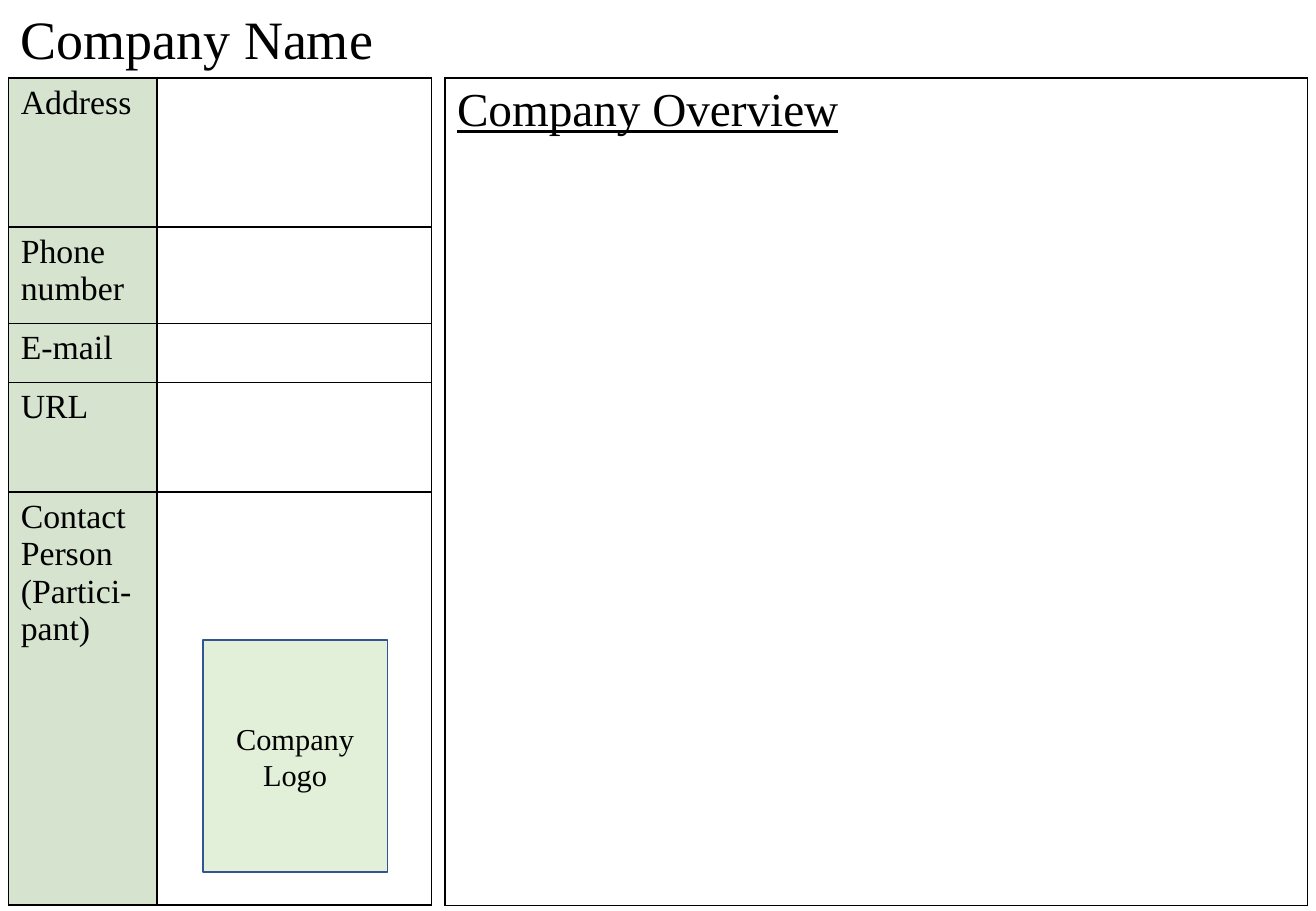
from lxml import etree
from pptx import Presentation
from pptx.dml.color import RGBColor
from pptx.enum.shapes import MSO_SHAPE
from pptx.enum.text import MSO_ANCHOR, PP_ALIGN
from pptx.oxml.ns import qn
from pptx.util import Cm, Pt

TITLE = "Company Name"
OVERVIEW = "Company Overview"
LOGO = ["Company", "Logo"]
# Label lines and row height in cm
FIELDS = [
    (["Address"], 3.12),
    (["Phone", "number"], 2.01),
    (["E-mail"], 1.24),
    (["URL"], 2.29),
    (["Contact", "Person", "(Partici-pant)"], 8.64),
]

FONT = "Times New Roman"
BLACK = RGBColor(0, 0, 0)
SAGE = RGBColor(0xD5, 0xE3, 0xCF)
MINT = RGBColor(0xE2, 0xF0, 0xD9)
BLUE = RGBColor(0x32, 0x54, 0x91)
LEFT, CENTER, JUSTIFY = PP_ALIGN.LEFT, PP_ALIGN.CENTER, PP_ALIGN.JUSTIFY
MIDDLE = MSO_ANCHOR.MIDDLE
RECT = MSO_SHAPE.RECTANGLE

WIDTH, HEIGHT = 27.51, 19.05
EDGE, TOP = 0.18, 1.63
COLS = [3.1, 5.74]
PANEL_X, PANEL_W = 9.3, 18.03
ROWS = [high for _, high in FIELDS]


def write(frame, lines, size, align=LEFT, under=None):
    for i, line in enumerate(lines):
        para = frame.add_paragraph() if i else frame.paragraphs[0]
        para.alignment = align
        run = para.add_run()
        run.text = line
        font = run.font
        font.name, font.size, font.underline = FONT, Pt(size), under
        font.color.rgb = BLACK


def frame_cell(cell):
    """Draw a 1 pt black line on all four sides of the cell."""
    props = cell._tc.get_or_add_tcPr()
    for i, side in enumerate("LRTB"):
        line = etree.Element(qn("a:ln" + side), w=str(Pt(1)))
        fill = etree.SubElement(line, qn("a:solidFill"))
        etree.SubElement(fill, qn("a:srgbClr"), val=str(BLACK))
        props.insert(i, line)


def add_grid(slide, x, cols, rows):
    """Add a table with plain bordered cells."""
    grid = slide.shapes.add_table(
        len(rows), len(cols), Cm(x), Cm(TOP), Cm(sum(cols)), Cm(sum(rows))
    ).table
    grid.first_row = grid.horz_banding = False
    for col, wide in zip(grid.columns, cols):
        col.width = Cm(wide)
    for row, high in zip(grid.rows, rows):
        row.height = Cm(high)
    for cell in grid.iter_cells():
        cell.fill.background()
        frame_cell(cell)
    return grid


def main():
    deck = Presentation()
    deck.slide_width, deck.slide_height = Cm(WIDTH), Cm(HEIGHT)
    slide = deck.slides.add_slide(deck.slide_layouts[6])

    panel = add_grid(slide, PANEL_X, [PANEL_W], [sum(ROWS)])
    write(panel.cell(0, 0).text_frame, [OVERVIEW], 28, JUSTIFY, True)

    form = add_grid(slide, EDGE, COLS, ROWS)
    for i, (lines, _) in enumerate(FIELDS):
        label = form.cell(i, 0)
        label.fill.solid()
        label.fill.fore_color.rgb = SAGE
        write(label.text_frame, lines, 20)

    title = slide.shapes.add_textbox(
        Cm(EDGE), Cm(0), Cm(WIDTH - EDGE), Cm(TOP))
    title.text_frame.word_wrap = True
    write(title.text_frame, [TITLE], 32)

    logo = slide.shapes.add_shape(
        RECT, Cm(4.24), Cm(13.39), Cm(3.86), Cm(4.85))
    logo.shadow.inherit = False
    logo.fill.solid()
    logo.fill.fore_color.rgb = MINT
    logo.line.color.rgb = BLUE
    logo.line.width = Pt(1)
    logo.text_frame.vertical_anchor = MIDDLE
    write(logo.text_frame, LOGO, 18, CENTER)

    deck.save("out.pptx")


if __name__ == "__main__":
    main()
